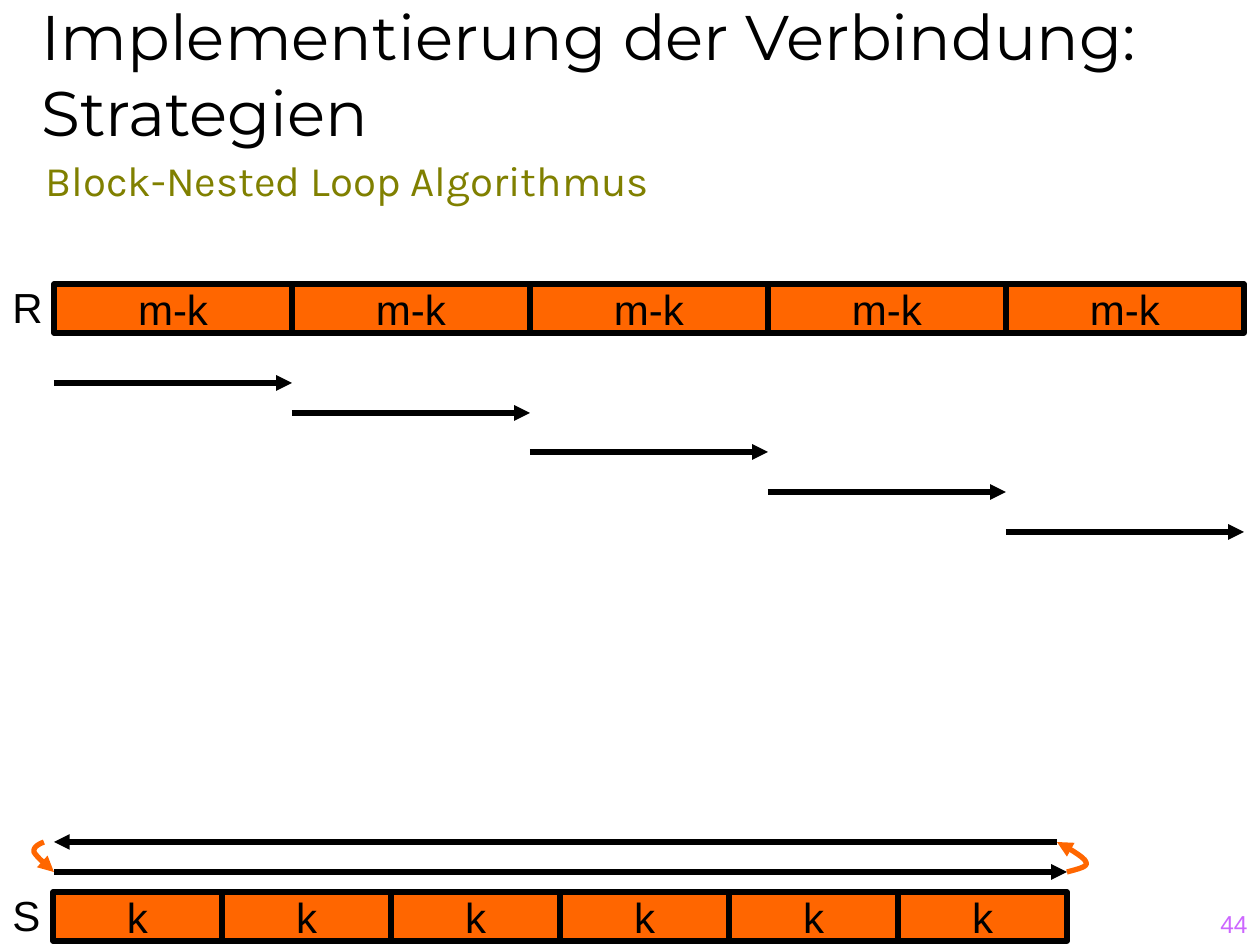
from lxml.etree import SubElement
from pptx import Presentation
from pptx.dml.color import RGBColor
from pptx.enum.shapes import MSO_CONNECTOR, MSO_SHAPE
from pptx.enum.text import MSO_ANCHOR as Anchor, PP_ALIGN as Align
from pptx.oxml.ns import qn
from pptx.util import Pt

PX = 914400 / 126
BLACK = RGBColor(0x00, 0x00, 0x00)
ORANGE = RGBColor(0xFF, 0x66, 0x00)
OLIVE = RGBColor(0x80, 0x80, 0x00)
VIOLET = RGBColor(0xCC, 0x66, 0xFF)

R_LEFT, R_TOP, R_WIDTH = 54, 284, 238
S_LEFT, S_TOP, S_WIDTH = 53, 892, 169
TILE_HEIGHT = 49
SCAN_LEVELS = (383, 413, 452, 492, 532)
BACK_LEVEL, FORTH_LEVEL = 842, 872
RIGHT_TURN = ((1067, 872), (1077, 869), (1089, 867), (1086, 862),
              (1085, 857), (1063, 845), (1057, 842))
LEFT_TURN = ((44, 842), (39, 844), (33, 847), (34, 852),
             (37, 857), (45, 864), (54, 872))


def emu(*lengths):
    """Turn px lengths into EMU."""
    return [round(length * PX) for length in lengths]


def write(shape, text, size, font, color, align, anchor, wrap):
    """Put one formatted paragraph into a shape and return it."""
    frame = shape.text_frame
    frame.text = text
    frame.word_wrap = wrap
    frame.vertical_anchor = anchor
    para = frame.paragraphs[0]
    para.alignment = align
    span = para.runs[0]
    span.font.size = Pt(size)
    span.font.name = font
    span.font.color.rgb = color
    return para


def add_text(page, area, text, size=24, font="Arial", color=BLACK,
             align=Align.LEFT, anchor=Anchor.TOP, wrap=True):
    """Add a text box and return its paragraph."""
    box = page.shapes.add_textbox(*emu(*area))
    return write(box, text, size, font, color, align, anchor, wrap)


def add_relation(page, name, text, count, left, top, width):
    """Add a named row of equal block tiles."""
    add_text(page, (0, top - 9, left, 63), name, align=Align.CENTER, wrap=False)
    for index in range(count):
        area = emu(left + index * width, top, width, TILE_HEIGHT)
        tile = page.shapes.add_shape(MSO_SHAPE.RECTANGLE, *area)
        tile.shadow.inherit = False
        tile.fill.solid()
        tile.fill.fore_color.rgb = ORANGE
        tile.line.color.rgb = BLACK
        tile.line.width = Pt(3)
        write(tile, text, 24, "Arial", BLACK, Align.CENTER, Anchor.MIDDLE, False)


def style_arrow(shape, color):
    """Give a line its colour, width and arrowhead."""
    shape.line.color.rgb = color
    shape.line.width = Pt(3)
    SubElement(shape.line._get_or_add_ln(), qn("a:tailEnd"), type="triangle")


def add_arrow(page, start, end, level):
    """Add a horizontal scan arrow."""
    ends = emu(start, level, end, level)
    arrow = page.shapes.add_connector(MSO_CONNECTOR.STRAIGHT, *ends)
    style_arrow(arrow, BLACK)
    SubElement(arrow._element.spPr, qn("a:effectLst"))


def bezier(points, steps=8):
    """Return points along a cubic curve, without its start."""
    return [tuple(sum(weight * point[axis] for weight, point in zip(
                ((1 - t) ** 3, 3 * t * (1 - t) ** 2, 3 * t * t * (1 - t), t ** 3),
                points)) for axis in (0, 1))
            for t in (step / steps for step in range(1, steps + 1))]


def add_turn(page, points):
    """Add a curved arrow through two cubic segments."""
    curve = bezier(points[:4]) + bezier(points[3:])
    builder = page.shapes.build_freeform(*emu(*points[0]))
    builder.add_line_segments([emu(*point) for point in curve], close=False)
    turn = builder.convert_to_shape()
    turn.shadow.inherit = False
    turn.fill.background()
    style_arrow(turn, ORANGE)


def main():
    """Build the block-nested loop slide."""
    deck = Presentation()
    deck.slide_width, deck.slide_height = emu(1260, 945)
    page = deck.slides.add_slide(deck.slide_layouts[6])

    add_text(page, (998, 882, 262, 63), "44", 14, color=VIOLET,
             align=Align.RIGHT, anchor=Anchor.BOTTOM)
    subtitle = add_text(page, (33, 158, 1227, 57), "Block-Nested Loop Algorithmus",
                        font="Karla", color=OLIVE)
    subtitle.line_spacing = 0.8
    add_text(page, (29, 76, 1231, 79), "Implementierung der Verbindung: Strategien",
             36, "Montserrat", anchor=Anchor.BOTTOM)

    add_relation(page, "R", "m-k", 5, R_LEFT, R_TOP, R_WIDTH)
    add_relation(page, "S", "k", 6, S_LEFT, S_TOP, S_WIDTH)
    for index, level in enumerate(SCAN_LEVELS):
        start = R_LEFT + index * R_WIDTH
        add_arrow(page, start, start + R_WIDTH, level)
    add_arrow(page, R_LEFT, 1067, FORTH_LEVEL)
    add_arrow(page, 1057, R_LEFT, BACK_LEVEL)
    add_turn(page, RIGHT_TURN)
    add_turn(page, LEFT_TURN)
    deck.save("out.pptx")


if __name__ == "__main__":
    main()
